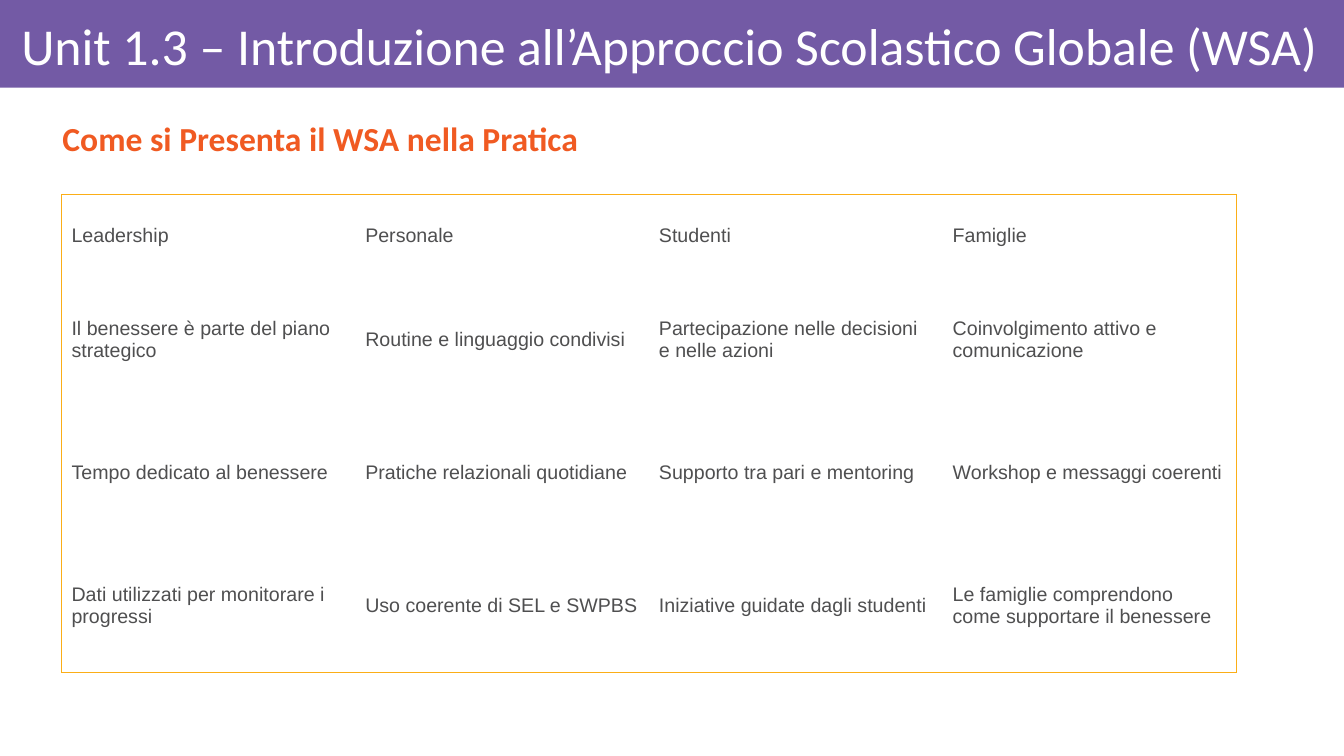
from dataclasses import dataclass

from lxml.etree import SubElement
from pptx import Presentation
from pptx.dml.color import RGBColor
from pptx.enum.shapes import MSO_SHAPE
from pptx.enum.text import MSO_ANCHOR, MSO_AUTO_SIZE, PP_ALIGN
from pptx.oxml.ns import qn
from pptx.slide import Slide
from pptx.table import _Cell
from pptx.text.text import TextFrame
from pptx.util import Pt

PURPLE, ORANGE, YELLOW = "735AA5", "F05A22", "FBAE17"
GREY, WHITE = "4F4F50", "FFFFFF"
NO_STYLE = "{2D5ABB26-0587-4C30-8999-92F81FD0307C}"
COLUMN_WIDTH, HEADER_HEIGHT, ROW_HEIGHT = 209.8, 56.2, 95.1


@dataclass
class Area:
    """One group of people and what the approach means for it."""
    name: str
    practices: tuple[str, ...]


AREAS = [
    Area("Leadership", ("Il benessere è parte del piano strategico",
                        "Tempo dedicato al benessere",
                        "Dati utilizzati per monitorare i progressi")),
    Area("Personale", ("Routine e linguaggio condivisi",
                       "Pratiche relazionali quotidiane",
                       "Uso coerente di SEL e SWPBS")),
    Area("Studenti", ("Partecipazione nelle decisioni e nelle azioni",
                      "Supporto tra pari e mentoring",
                      "Iniziative guidate dagli studenti")),
    Area("Famiglie", ("Coinvolgimento attivo e comunicazione",
                      "Workshop e messaggi coerenti",
                      "Le famiglie comprendono come supportare il benessere")),
]


def color(value: str) -> RGBColor:
    return RGBColor.from_string(value)


def write(frame: TextFrame, text: str, *, size: float, fill: str, font: str = "Calibri",
          bold: bool = False, align: PP_ALIGN = PP_ALIGN.LEFT, spacing: float = 1.0) -> None:
    paragraph = frame.paragraphs[0]
    paragraph.alignment = align
    paragraph.line_spacing = spacing
    run = paragraph.add_run()
    run.text = text
    run.font.name = font
    run.font.size = Pt(size)
    run.font.bold = bold
    run.font.color.rgb = color(fill)


def set_frame(frame: TextFrame, left: float, top: float, right: float, bottom: float) -> None:
    frame.word_wrap = True
    frame.auto_size = MSO_AUTO_SIZE.NONE
    frame.vertical_anchor = MSO_ANCHOR.MIDDLE
    frame.margin_left, frame.margin_top = Pt(left), Pt(top)
    frame.margin_right, frame.margin_bottom = Pt(right), Pt(bottom)


def set_borders(cell: _Cell, visible: dict[str, bool]) -> None:
    properties = cell._tc.get_or_add_tcPr()
    for side, shown in visible.items():
        line = SubElement(properties, qn(f"a:ln{side}"), w=str(Pt(0.75)))
        if shown:
            fill = SubElement(line, qn("a:solidFill"))
            SubElement(fill, qn("a:srgbClr"), val=YELLOW)
        else:
            SubElement(line, qn("a:noFill"))


def add_header(slide: Slide) -> None:
    band = slide.shapes.add_shape(MSO_SHAPE.RECTANGLE, 0, 0, Pt(960), Pt(62.7))
    band.shadow.inherit = False
    band.fill.solid()
    band.fill.fore_color.rgb = color(PURPLE)
    band.line.fill.background()
    title = slide.shapes.title
    title._element.addprevious(band._element)  # band behind the title
    title.left, title.top, title.width, title.height = Pt(8), Pt(6.5), Pt(940), Pt(56.2)
    set_frame(title.text_frame, 7.2, 4.3, 4.3, 4.3)
    write(title.text_frame, "Unit 1.3 – Introduzione all’Approccio Scolastico Globale (WSA)",
          size=37, fill=WHITE, spacing=0.9)


def add_subtitle(slide: Slide) -> None:
    box = slide.shapes.add_textbox(Pt(19.4), Pt(79.2), Pt(940), Pt(43.2))
    set_frame(box.text_frame, 25.2, 3.6, 7.2, 3.6)
    write(box.text_frame, "Come si Presenta il WSA nella Pratica",
          size=24, fill=ORANGE, bold=True, align=PP_ALIGN.JUSTIFY, spacing=0.9)


def add_practice_table(slide: Slide) -> None:
    last_row, last_column = len(AREAS[0].practices), len(AREAS) - 1
    frame = slide.shapes.add_table(
        last_row + 1, last_column + 1, Pt(43.9), Pt(139),
        Pt(COLUMN_WIDTH * len(AREAS)), Pt(HEADER_HEIGHT + ROW_HEIGHT * last_row))
    table = frame.table
    table.first_row = table.horz_banding = False
    table._tbl.tblPr.find(qn("a:tableStyleId")).text = NO_STYLE
    for index, row in enumerate(table.rows):
        row.height = Pt(ROW_HEIGHT if index else HEADER_HEIGHT)

    for column, area in enumerate(AREAS):
        table.columns[column].width = Pt(COLUMN_WIDTH)
        for row, text in enumerate((area.name, *area.practices)):
            cell = table.cell(row, column)
            cell.vertical_anchor = MSO_ANCHOR.MIDDLE
            cell.margin_left = cell.margin_right = Pt(7.2)
            cell.margin_top = cell.margin_bottom = Pt(7.2)
            # Only the outer edge of the table is drawn
            set_borders(cell, {"L": column == 0, "R": column == last_column,
                               "T": row == 0, "B": row == last_row})
            cell.fill.background()
            write(cell.text_frame, text, size=14, fill=GREY, font="Arial",
                  spacing=1.0 if row else 1.15)


def main() -> None:
    presentation = Presentation()
    presentation.slide_width, presentation.slide_height = Pt(960), Pt(540)
    slide = presentation.slides.add_slide(presentation.slide_layouts[5])
    add_header(slide)
    add_subtitle(slide)
    add_practice_table(slide)
    presentation.save("out.pptx")


if __name__ == "__main__":
    main()
